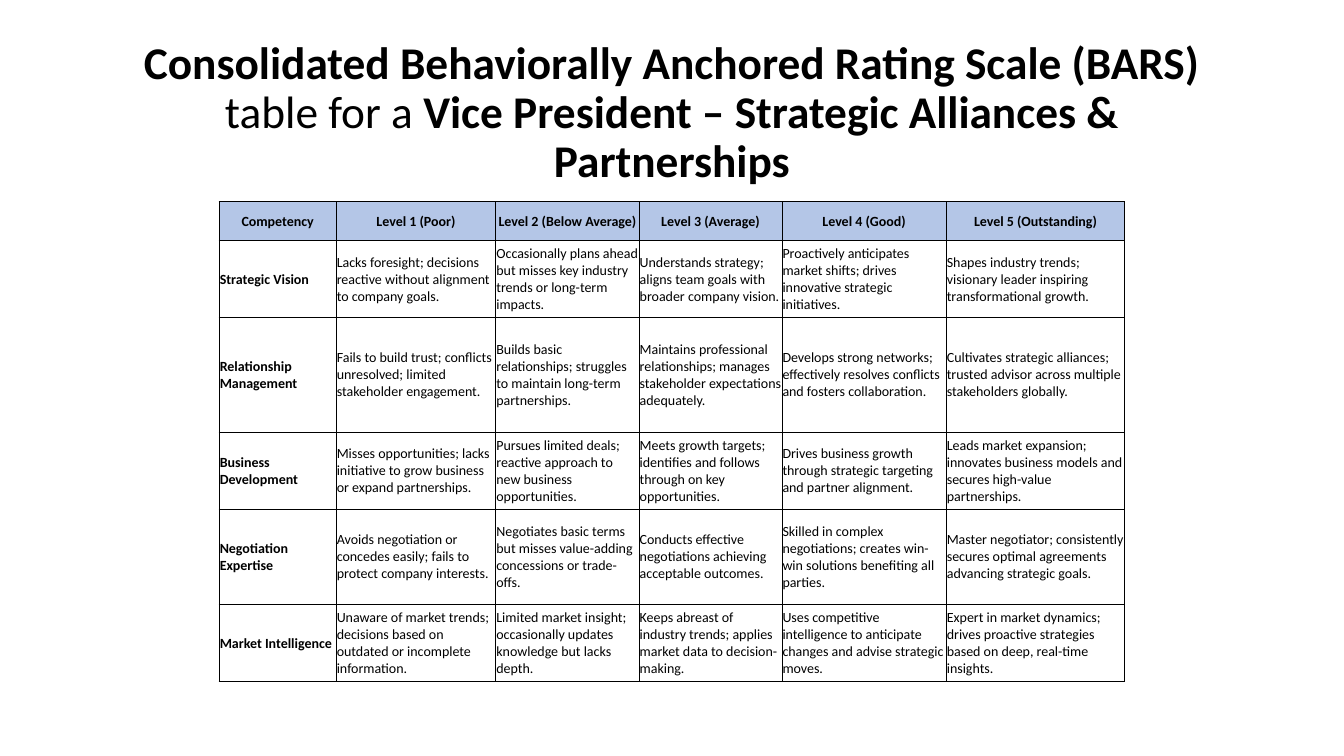
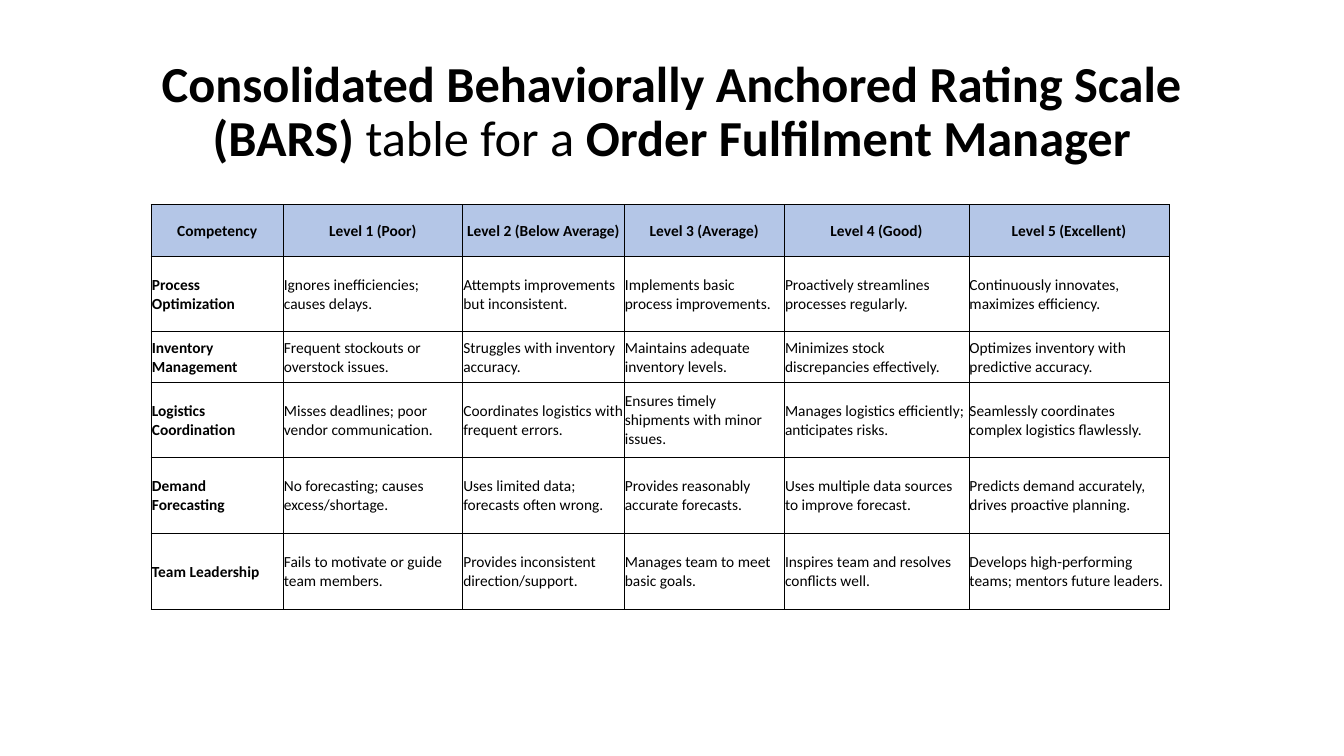
import dataclasses

import lxml.etree
import pptx
import pptx.dml.color
import pptx.enum.text
import pptx.oxml.ns
import pptx.util

Pt = pptx.util.Pt
RGB = pptx.dml.color.RGBColor
ALIGN = pptx.enum.text.PP_ALIGN
ANCHOR = pptx.enum.text.MSO_ANCHOR


@dataclasses.dataclass(frozen=True)
class Theme:
    font: str = "Calibri"
    ink: str = "000000"
    header_fill: str = "B4C6E7"
    strong_line: float = 1
    light_line: float = 0.5
    title_line_spacing: float = 0.9
    cell_inset: float = 0.5


@dataclasses.dataclass(frozen=True)
class Scale:
    """One slide: a job role and its rating scale."""
    role: str
    title_size: float
    text_size: float
    left: float
    top: float
    widths: tuple
    heights: tuple
    top_level: str
    competencies: tuple


THEME = Theme()
TITLE_BOX = (66, 28.8, 828, 104.4)
LEVELS = ("Competency", "Level 1 (Poor)", "Level 2 (Below Average)",
          "Level 3 (Average)", "Level 4 (Good)")

ALLIANCES = Scale(
    role="Vice President – Strategic Alliances & Partnerships",
    title_size=32.4, text_size=10, left=156.5, top=144,
    widths=(83.6, 114, 102.4, 102, 117.4, 127.6),
    heights=(28, 54.8, 82, 54.8, 68.2, 55.2),
    top_level="Level 5 (Outstanding)",
    competencies=(
        ("Strategic Vision",
         "Lacks foresight; decisions reactive without alignment to company goals.",
         "Occasionally plans ahead but misses key industry trends or long-term impacts.",
         "Understands strategy; aligns team goals with broader company vision.",
         "Proactively anticipates market shifts; drives innovative strategic initiatives.",
         "Shapes industry trends; visionary leader inspiring transformational growth."),
        ("Relationship Management",
         "Fails to build trust; conflicts unresolved; limited stakeholder engagement.",
         "Builds basic relationships; struggles to maintain long-term partnerships.",
         "Maintains professional relationships; manages stakeholder expectations adequately.",
         "Develops strong networks; effectively resolves conflicts and fosters collaboration.",
         "Cultivates strategic alliances; trusted advisor across multiple stakeholders globally."),
        ("Business Development",
         "Misses opportunities; lacks initiative to grow business or expand partnerships.",
         "Pursues limited deals; reactive approach to new business opportunities.",
         "Meets growth targets; identifies and follows through on key opportunities.",
         "Drives business growth through strategic targeting and partner alignment.",
         "Leads market expansion; innovates business models and secures high-value partnerships."),
        ("Negotiation Expertise",
         "Avoids negotiation or concedes easily; fails to protect company interests.",
         "Negotiates basic terms but misses value-adding concessions or trade-offs.",
         "Conducts effective negotiations achieving acceptable outcomes.",
         "Skilled in complex negotiations; creates win-win solutions benefiting all parties.",
         "Master negotiator; consistently secures optimal agreements advancing strategic goals."),
        ("Market Intelligence",
         "Unaware of market trends; decisions based on outdated or incomplete information.",
         "Limited market insight; occasionally updates knowledge but lacks depth.",
         "Keeps abreast of industry trends; applies market data to decision-making.",
         "Uses competitive intelligence to anticipate changes and advise strategic moves.",
         "Expert in market dynamics; drives proactive strategies based on deep, "
         "real-time insights."),
    ))

FULFILMENT = Scale(
    role="Order Fulfilment Manager",
    title_size=36, text_size=11, left=108, top=146.2,
    widths=(94.3, 128.2, 115.4, 114.4, 131.8, 143.2),
    heights=(36.8, 54, 36, 54, 54, 54.6),
    top_level="Level 5 (Excellent)",
    competencies=(
        ("Process Optimization",
         "Ignores inefficiencies; causes delays.",
         "Attempts improvements but inconsistent.",
         "Implements basic process improvements.",
         "Proactively streamlines processes regularly.",
         "Continuously innovates, maximizes efficiency."),
        ("Inventory Management",
         "Frequent stockouts or overstock issues.",
         "Struggles with inventory accuracy.",
         "Maintains adequate inventory levels.",
         "Minimizes stock discrepancies effectively.",
         "Optimizes inventory with predictive accuracy."),
        ("Logistics Coordination",
         "Misses deadlines; poor vendor communication.",
         "Coordinates logistics with frequent errors.",
         "Ensures timely shipments with minor issues.",
         "Manages logistics efficiently; anticipates risks.",
         "Seamlessly coordinates complex logistics flawlessly."),
        ("Demand Forecasting",
         "No forecasting; causes excess/shortage.",
         "Uses limited data; forecasts often wrong.",
         "Provides reasonably accurate forecasts.",
         "Uses multiple data sources to improve forecast.",
         "Predicts demand accurately, drives proactive planning."),
        ("Team Leadership",
         "Fails to motivate or guide team members.",
         "Provides inconsistent direction/support.",
         "Manages team to meet basic goals.",
         "Inspires team and resolves conflicts well.",
         "Develops high-performing teams; mentors future leaders."),
    ))


def set_font(font, size):
    font.name = THEME.font
    font.size = Pt(size)
    font.color.rgb = RGB.from_string(THEME.ink)


# Title: fixed wording in bold and regular, then the role
def add_title(slide, scale):
    title = slide.shapes.title
    title.left, title.top, title.width, title.height = map(Pt, TITLE_BOX)
    frame = title.text_frame
    frame.word_wrap = True
    frame.auto_size = pptx.enum.text.MSO_AUTO_SIZE.NONE
    frame.vertical_anchor = ANCHOR.MIDDLE
    heading = frame.paragraphs[0]
    heading.alignment = ALIGN.CENTER
    heading.line_spacing = THEME.title_line_spacing
    set_font(heading.font, scale.title_size)
    for words, bold in (
            ("Consolidated Behaviorally Anchored Rating Scale (BARS)", True),
            (" table for a ", False),
            (scale.role, True)):
        run = heading.add_run()
        run.text = words
        run.font.bold = bold


# Cell borders: strong around the table, the header row and the first column
def set_borders(cell, row, column, last_row, last_column):
    strong_sides = {
        "L": column <= 1,
        "R": column in (0, last_column),
        "T": row <= 1,
        "B": row in (0, last_row),
    }
    qn = pptx.oxml.ns.qn
    properties = cell._tc.get_or_add_tcPr()
    for side, strong in strong_sides.items():
        width = Pt(THEME.strong_line if strong else THEME.light_line)
        line = lxml.etree.SubElement(properties, qn(f"a:ln{side}"), w=str(int(width)))
        fill = lxml.etree.SubElement(line, qn("a:solidFill"))
        lxml.etree.SubElement(fill, qn("a:srgbClr"), val=THEME.ink)


def fill_cell(cell, text, size, is_header, is_bold):
    cell.margin_left = cell.margin_right = cell.margin_top = Pt(THEME.cell_inset)
    cell.margin_bottom = 0
    cell.vertical_anchor = ANCHOR.MIDDLE
    if is_header:
        cell.fill.solid()
        cell.fill.fore_color.rgb = RGB.from_string(THEME.header_fill)
    else:
        cell.fill.background()
    cell.text = text
    paragraph = cell.text_frame.paragraphs[0]
    paragraph.alignment = ALIGN.CENTER if is_header else ALIGN.LEFT
    set_font(paragraph.font, size)
    paragraph.font.bold = is_bold


# Rating table: one row per competency, one column per level
def add_rating_table(slide, scale):
    rows = ((*LEVELS, scale.top_level), *scale.competencies)
    last_row, last_column = len(rows) - 1, len(scale.widths) - 1
    ratings = slide.shapes.add_table(
        len(rows), len(scale.widths), Pt(scale.left), Pt(scale.top),
        Pt(sum(scale.widths)), Pt(sum(scale.heights))).table
    ratings.first_row = ratings.horz_banding = False
    for column, width in zip(ratings.columns, scale.widths):
        column.width = Pt(width)
    for row, height in zip(ratings.rows, scale.heights):
        row.height = Pt(height)
    for r, texts in enumerate(rows):
        for c, text in enumerate(texts):
            cell = ratings.cell(r, c)
            set_borders(cell, r, c, last_row, last_column)
            fill_cell(cell, text, scale.text_size, r == 0, r == 0 or c == 0)


def main():
    deck = pptx.Presentation()
    deck.slide_width, deck.slide_height = Pt(960), Pt(540)
    title_only = deck.slide_layouts[5]
    for scale in (ALLIANCES, FULFILMENT):
        slide = deck.slides.add_slide(title_only)
        add_title(slide, scale)
        add_rating_table(slide, scale)
    deck.save("out.pptx")


if __name__ == "__main__":
    main()
